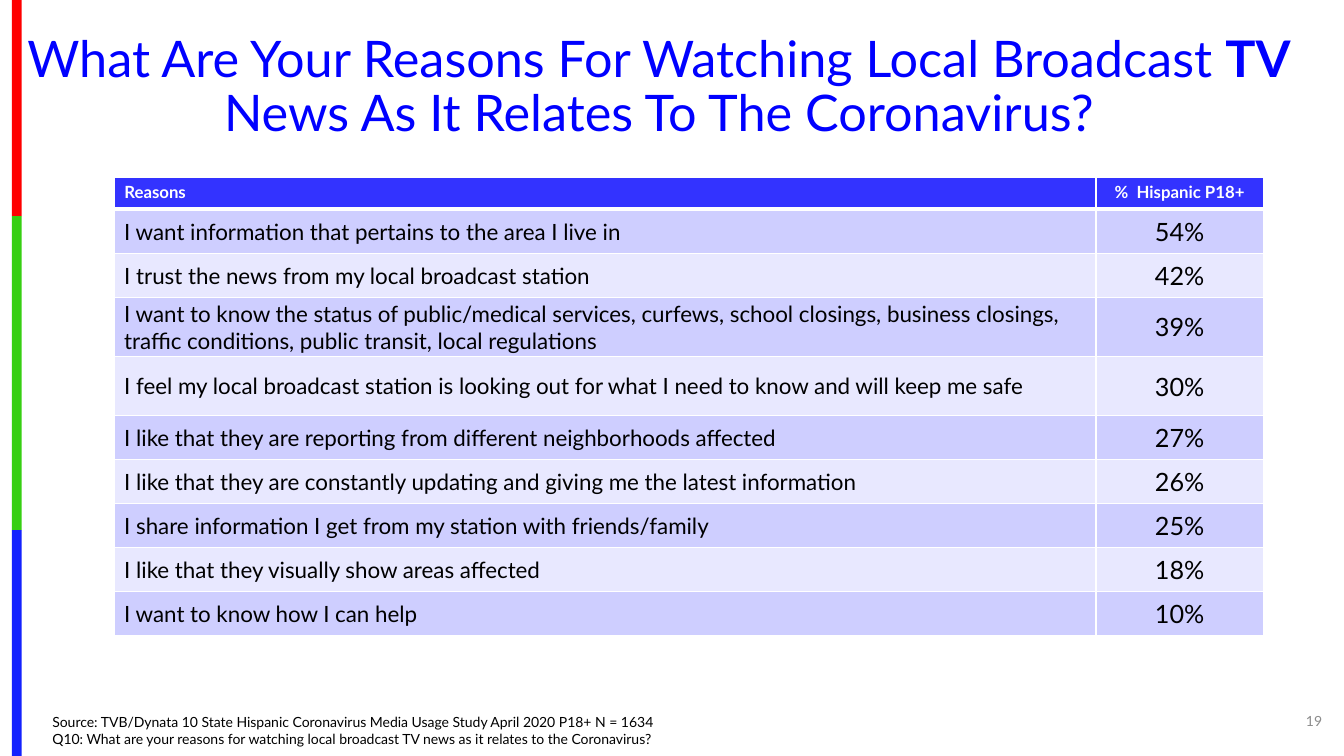
from lxml.etree import SubElement
from pptx import Presentation
from pptx.dml.color import RGBColor
from pptx.enum.shapes import MSO_SHAPE
from pptx.enum.text import MSO_ANCHOR, PP_ALIGN
from pptx.oxml.ns import qn
from pptx.util import Cm, Pt

FONT = "Lato"
RED = RGBColor(0xFE, 0x00, 0x00)
GREEN = RGBColor(0x36, 0xCF, 0x12)
BLUE = RGBColor(0x13, 0x22, 0xFE)
TITLE_BLUE = RGBColor(0x00, 0x00, 0xFF)
HEADER_BLUE = RGBColor(0x33, 0x33, 0xFF)
BAND_DARK = RGBColor(0xCE, 0xCE, 0xFF)
BAND_LIGHT = RGBColor(0xE8, 0xE8, 0xFF)
WHITE = RGBColor(0xFF, 0xFF, 0xFF)
BLACK = RGBColor(0x00, 0x00, 0x00)
GRAY = RGBColor(0x8C, 0x8C, 0x8C)

TITLE = [
    ("What Are Your Reasons For Watching Local Broadcast ", False),
    ("TV", True),
    (" News As It Relates To The Coronavirus?", False),
]
HEADER = ("Reasons", "%  Hispanic P18+")
REASONS = [
    ("I want information that pertains to the area I live in", "54%"),
    ("I trust the news from my local broadcast station", "42%"),
    ("I want to know the status of public/medical services, curfews, school closings, "
     "business closings, traffic conditions, public transit, local regulations", "39%"),
    ("I feel my local broadcast station is looking out for what I need to know "
     "and will keep me safe", "30%"),
    ("I like that they are reporting from different neighborhoods affected", "27%"),
    ("I like that they are constantly updating and giving me the latest information", "26%"),
    ("I share information I get from my station with friends/family", "25%"),
    ("I like that they visually show areas affected", "18%"),
    ("I want to know how I can help", "10%"),
]
SOURCE = [
    "Source: TVB/Dynata 10 State Hispanic Coronavirus Media Usage Study April 2020 P18+ N = 1634",
    "Q10: What are your reasons for watching local broadcast TV news as it relates to the Coronavirus?",
]
PAGE = "19"
STRIPES = [(RED, 5.45), (GREEN, 7.91), (BLUE, 5.69)]
COLUMNS = [24.74, 4.22]
HEADER_HEIGHT, ROW_HEIGHT, TALL_HEIGHT = 0.81, 1.11, 1.49
TALL_ROWS = (3, 4)


def add_run(p, text, size, color, bold=False):
    r = p.add_run()
    r.text = text
    r.font.name = FONT
    r.font.size = Pt(size)
    r.font.bold = bold
    r.font.color.rgb = color


def add_box(slide, left, top, width, height, anchor):
    tf = slide.shapes.add_textbox(Cm(left), Cm(top), Cm(width), Cm(height)).text_frame
    tf.word_wrap = True
    tf.vertical_anchor = anchor
    return tf.paragraphs[0]


def add_borders(cell, top, bottom):
    tcPr = cell._tc.get_or_add_tcPr()
    for tag, width in (("lnL", 1), ("lnR", 1), ("lnT", top), ("lnB", bottom)):
        ln = SubElement(tcPr, qn(f"a:{tag}"), w=str(Pt(width)))
        fill = SubElement(ln, qn("a:solidFill"))
        SubElement(fill, qn("a:srgbClr"), val=str(WHITE))


def add_stripes(slide):
    top = 0
    for color, height in STRIPES:
        sp = slide.shapes.add_shape(MSO_SHAPE.RECTANGLE, Cm(0.3), Cm(top), Cm(0.25), Cm(height))
        sp.shadow.inherit = False
        sp.fill.solid()
        sp.fill.fore_color.rgb = color
        sp.line.fill.background()
        top += height


def add_title(slide):
    title = slide.shapes.title
    title.left, title.top, title.width, title.height = Cm(0.41), Cm(0.71), Cm(32.39), Cm(3.02)
    tf = title.text_frame
    tf.word_wrap = True
    tf.vertical_anchor = MSO_ANCHOR.MIDDLE
    tf.margin_left = tf.margin_right = Cm(0.15)
    p = tf.paragraphs[0]
    p.alignment = PP_ALIGN.CENTER
    p.line_spacing = 0.9
    for text, bold in TITLE:
        add_run(p, text, 36, TITLE_BLUE, bold)


def add_reasons(slide):
    rows = [HEADER] + REASONS
    heights = [HEADER_HEIGHT] + [
        TALL_HEIGHT if i in TALL_ROWS else ROW_HEIGHT for i in range(1, len(rows))]
    table = slide.shapes.add_table(
        len(rows), len(COLUMNS), Cm(2.88), Cm(4.46), Cm(sum(COLUMNS)), Cm(sum(heights))).table
    for column, width in zip(table.columns, COLUMNS):
        column.width = Cm(width)
    for i, (row, height) in enumerate(zip(rows, heights)):
        table.rows[i].height = Cm(height)
        for j, text in enumerate(row):
            cell = table.cell(i, j)
            add_borders(cell, 3 if i == 1 else 1, 3 if i == 0 else 1)
            cell.fill.solid()
            p = cell.text_frame.paragraphs[0]
            p.alignment = PP_ALIGN.CENTER if j else PP_ALIGN.LEFT
            if i == 0:
                cell.fill.fore_color.rgb = HEADER_BLUE
                add_run(p, text, 12, WHITE, True)
                continue
            cell.fill.fore_color.rgb = BAND_DARK if i % 2 else BAND_LIGHT
            cell.vertical_anchor = MSO_ANCHOR.MIDDLE
            cell.margin_left = Cm(0.02 if j else 0.25)
            cell.margin_right = cell.margin_top = Cm(0.02)
            cell.margin_bottom = Cm(0)
            add_run(p, text, 18 if j else 16, BLACK)


def add_footer(slide):
    p = add_box(slide, 1.07, 17.65, 27.25, 1.3, MSO_ANCHOR.BOTTOM)
    for i, line in enumerate(SOURCE):
        if i:
            p.add_line_break()
        add_run(p, line, 10, BLACK)
    p = add_box(slide, 32.05, 17.65, 1.52, 1.02, MSO_ANCHOR.MIDDLE)
    p.alignment = PP_ALIGN.RIGHT
    add_run(p, PAGE, 10, GRAY)


def main():
    prs = Presentation()
    prs.slide_width, prs.slide_height = Cm(33.87), Cm(19.05)
    slide = prs.slides.add_slide(prs.slide_layouts[5])
    add_stripes(slide)
    add_title(slide)
    add_reasons(slide)
    add_footer(slide)
    prs.save("out.pptx")


if __name__ == "__main__":
    main()
